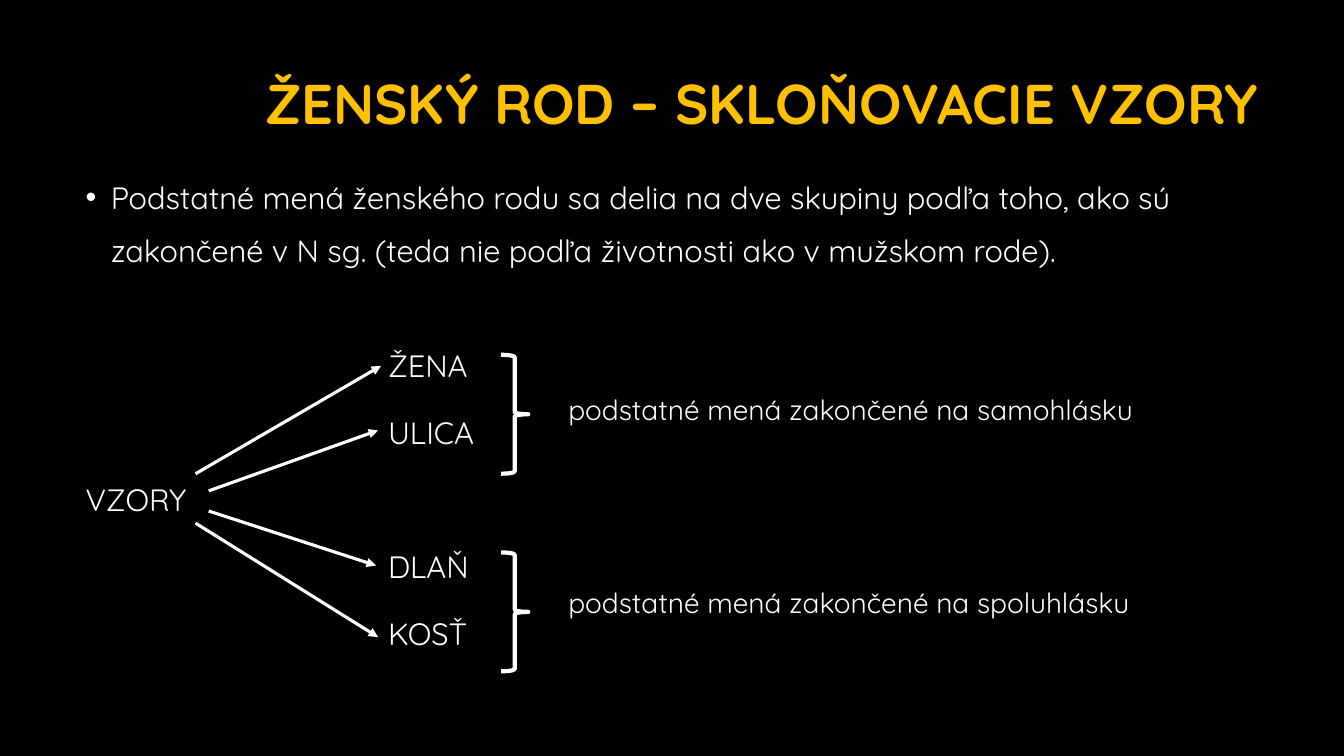
from pptx import Presentation, util as u
from pptx.dml.color import RGBColor
from pptx.enum import shapes, text
from pptx.oxml.ns import qn
from lxml import etree

BLACK = RGBColor(0x00, 0x00, 0x00)
WHITE = RGBColor(0xFF, 0xFF, 0xFF)
GOLD = RGBColor(0xFF, 0xC0, 0x00)
FONT = "Quicksand"
WIDTH, HEIGHT = u.Inches(13.33), u.Inches(7.5)

TITLE = "ŽENSKÝ ROD – SKLOŇOVACIE VZORY"
INTRO = ("Podstatné mená ženského rodu sa delia na dve skupiny podľa toho, ako sú "
         "zakončené v N sg. (teda nie podľa životnosti ako v mužskom rode).")
ROOT = "VZORY"
ROWS = ["ŽENA", "ULICA", ROOT, "DLAŇ", "KOSŤ"]
PATTERN_INDENT = 3
# Start and end of each arrow, in percent of the slide's width and height
ARROWS = [
    (14.55, 62.67, 28.35, 48.4),
    (15.53, 64.93, 28.13, 56.93),
    (15.53, 67.6, 27.98, 74.8),
    (14.55, 69.2, 28.13, 84.27),
]
# Top of the brace, top of its label, label
GROUPS = [
    (46.93, 51.2, "podstatné mená zakončené na samohlásku"),
    (73.07, 76.8, "podstatné mená zakončené na spoluhlásku"),
]


def place(left, top, width, height):
    """Turn percentages of the slide's size into lengths."""
    return [round(whole * share / 100) for whole, share in
            zip((WIDTH, HEIGHT) * 2, (left, top, width, height))]


def add_text_box(slide, *area):
    text_frame = slide.shapes.add_textbox(*place(*area)).text_frame
    text_frame.word_wrap = True
    return text_frame


def write(paragraph, content, size, color=WHITE, bold=False):
    paragraph.text = content
    for run in paragraph.runs:
        run.font.name = FONT
        run.font.size = u.Pt(size)
        run.font.bold = bold
        run.font.color.rgb = color


def indent(paragraph, left, first=0, bullet=None):
    properties = paragraph._p.get_or_add_pPr()
    properties.set("marL", str(u.Inches(left)))
    properties.set("indent", str(u.Inches(first)))
    if bullet:
        etree.SubElement(properties, qn("a:buFont")).set("typeface", "Arial")
        etree.SubElement(properties, qn("a:buChar")).set("char", bullet)


def add_title(slide):
    text_frame = add_text_box(slide, 18.08, 7.2, 76.28, 13.6)
    text_frame.vertical_anchor = text.MSO_ANCHOR.MIDDLE
    paragraph = text_frame.paragraphs[0]
    write(paragraph, TITLE, 40, GOLD, bold=True)
    paragraph.alignment = text.PP_ALIGN.RIGHT
    paragraph.line_spacing = 0.9


def add_body(slide):
    text_frame = add_text_box(slide, 5.63, 20.8, 88.73, 73.6)
    intro = text_frame.paragraphs[0]
    indent(intro, 0.25, -0.25, "•")
    write(intro, INTRO, 22)
    for row, word in enumerate(ROWS):
        paragraph = text_frame.add_paragraph()
        indent(paragraph, 0 if word == ROOT else PATTERN_INDENT)
        write(paragraph, word, 22)
        paragraph.space_before = u.Pt(10 if row else 44)
    for paragraph in text_frame.paragraphs:
        paragraph.line_spacing = 1.44


def add_arrow(slide, *ends):
    arrow = slide.shapes.add_connector(shapes.MSO_CONNECTOR.STRAIGHT, *place(*ends))
    arrow.line.color.rgb = WHITE
    arrow.line.width = u.Pt(2.25)
    line = arrow.line._get_or_add_ln()
    etree.SubElement(line, qn("a:tailEnd")).set("type", "triangle")
    etree.SubElement(arrow._element.spPr, qn("a:effectLst"))


def add_brace(slide, top):
    brace = slide.shapes.add_shape(shapes.MSO_SHAPE.RIGHT_BRACE,
                                   *place(37.28, top, 2.03, 15.73))
    brace.shadow.inherit = False
    brace.fill.background()
    brace.line.color.rgb = WHITE
    brace.line.width = u.Pt(3)


def main():
    presentation = Presentation()
    presentation.slide_width, presentation.slide_height = WIDTH, HEIGHT
    slide = presentation.slides.add_slide(presentation.slide_layouts[6])
    slide.background.fill.solid()
    slide.background.fill.fore_color.rgb = BLACK

    add_body(slide)
    add_title(slide)
    for ends in ARROWS:
        add_arrow(slide, *ends)
    for brace_top, label_top, label in GROUPS:
        add_brace(slide, brace_top)
        text_frame = add_text_box(slide, 41.55, label_top, 46.5, 5.87)
        write(text_frame.paragraphs[0], label, 20)

    presentation.save("out.pptx")


if __name__ == "__main__":
    main()
